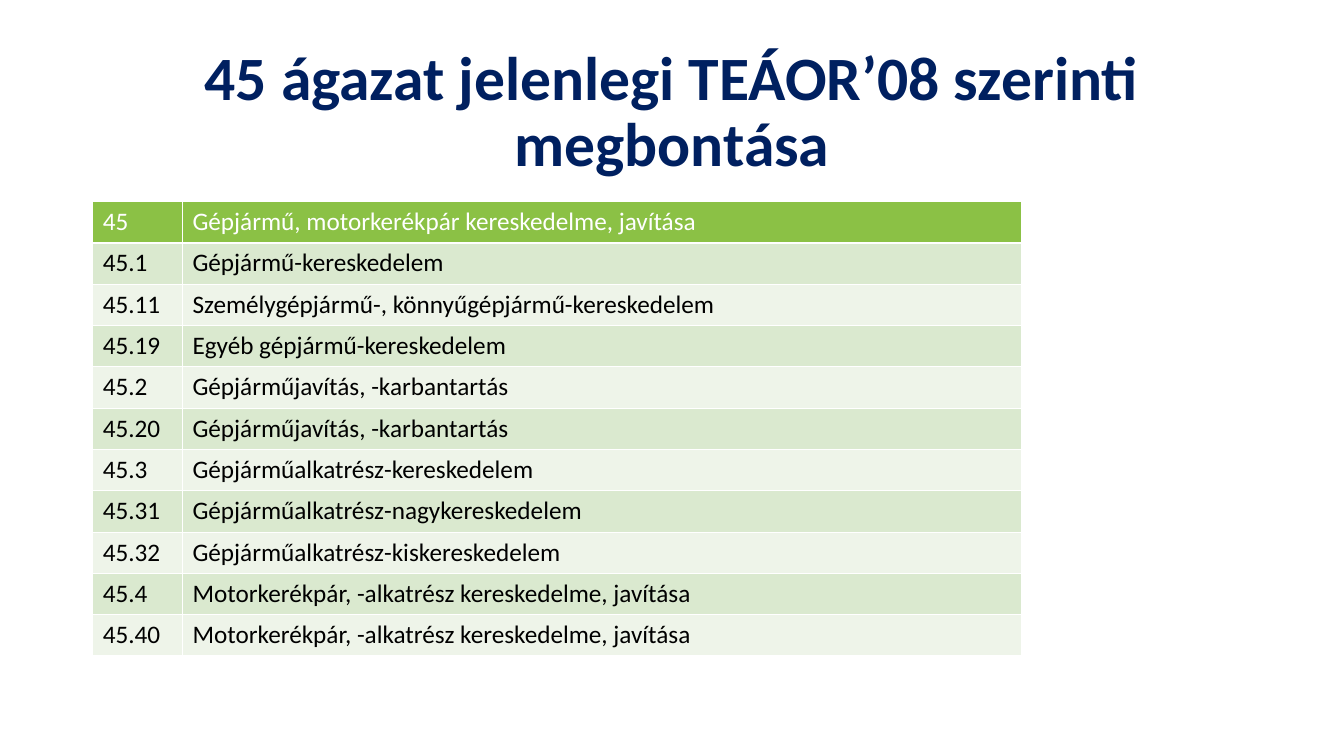
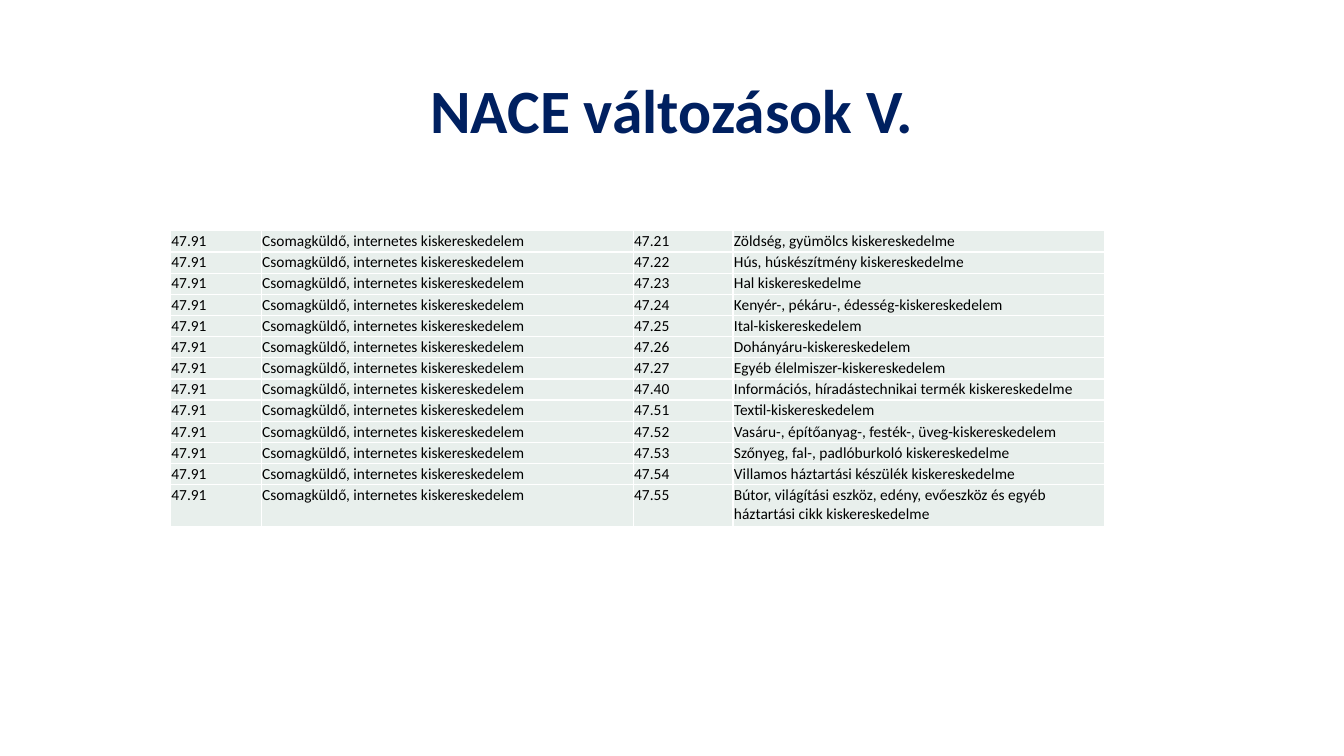
from pptx import Presentation
from pptx.dml.color import RGBColor
from pptx.enum.text import MSO_ANCHOR, PP_ALIGN
from pptx.oxml import parse_xml
from pptx.oxml.ns import nsdecls
from pptx.util import Inches, Pt

FONT = "Calibri"
NAVY, WHITE, BLACK = "002060", "FFFFFF", "000000"
GREEN, MID, PALE, MIST = "8BC145", "DAE9CF", "EEF4E9", "E8EFEC"
WIDE, HIGH = 13.33, 7.5

TRADE = [
    ("45", "Gépjármű, motorkerékpár kereskedelme, javítása"),
    ("45.1", "Gépjármű-kereskedelem"),
    ("45.11", "Személygépjármű-, könnyűgépjármű-kereskedelem"),
    ("45.19", "Egyéb gépjármű-kereskedelem"),
    ("45.2", "Gépjárműjavítás, -karbantartás"),
    ("45.20", "Gépjárműjavítás, -karbantartás"),
    ("45.3", "Gépjárműalkatrész-kereskedelem"),
    ("45.31", "Gépjárműalkatrész-nagykereskedelem"),
    ("45.32", "Gépjárműalkatrész-kiskereskedelem"),
    ("45.4", "Motorkerékpár, -alkatrész kereskedelme, javítása"),
    ("45.40", "Motorkerékpár, -alkatrész kereskedelme, javítása"),
]
OLD = ("47.91", "Csomagküldő, internetes kiskereskedelem")
NEW = [
    ("47.21", "Zöldség, gyümölcs kiskereskedelme"),
    ("47.22", "Hús, húskészítmény kiskereskedelme"),
    ("47.23", "Hal kiskereskedelme"),
    ("47.24", "Kenyér-, pékáru-, édesség-kiskereskedelem"),
    ("47.25", "Ital-kiskereskedelem"),
    ("47.26", "Dohányáru-kiskereskedelem"),
    ("47.27", "Egyéb élelmiszer-kiskereskedelem"),
    ("47.40", "Információs, híradástechnikai termék kiskereskedelme"),
    ("47.51", "Textil-kiskereskedelem"),
    ("47.52", "Vasáru-, építőanyag-, festék-, üveg-kiskereskedelem"),
    ("47.53", "Szőnyeg, fal-, padlóburkoló kiskereskedelme"),
    ("47.54", "Villamos háztartási készülék kiskereskedelme"),
    ("47.55", "Bútor, világítási eszköz, edény, evőeszköz és egyéb "
              "háztartási cikk kiskereskedelme"),
]
SLIDES = [
    dict(title="45 ágazat jelenlegi TEÁOR’08 szerinti megbontása",
         rows=TRADE, at=(0.92, 2), cols=(0.89, 8.32),
         tall=[0.41] * len(TRADE), size=18, pad=(0.1, 0.05, 0.1, 0.05),
         head=GREEN, bands=(PALE, MID)),
    dict(title="NACE változások V.",
         rows=[OLD + pair for pair in NEW], at=(1.69, 2.29),
         cols=(0.9, 3.69, 0.99, 3.69),
         tall=[0.21] * (len(NEW) - 1) + [0.42], size=11,
         pad=(0.01, 0.01, 0.01, 0), head=None, bands=(MIST, MIST)),
]


def color(code):
    return RGBColor.from_string(code)


def style(par, size, code, bold=False):
    font = par.font
    font.name, font.size, font.bold = FONT, Pt(size), bold
    font.color.rgb = color(code)


def add_title(slide, text):
    edge = 0.92
    box = slide.shapes.add_textbox(
        Inches(edge), Inches(0.4), Inches(WIDE - 2 * edge), Inches(1.45))
    frame = box.text_frame
    frame.word_wrap = True
    frame.vertical_anchor = MSO_ANCHOR.MIDDLE
    par = frame.paragraphs[0]
    par.text = text
    par.alignment = PP_ALIGN.CENTER
    par.line_spacing = 0.9
    style(par, 44, NAVY, True)


def add_edges(cell):
    props = cell._tc.get_or_add_tcPr()
    for side in "LRTB":
        props.append(parse_xml(
            f'<a:ln{side} {nsdecls("a")} w="{Pt(1)}"><a:solidFill>'
            f'<a:srgbClr val="{WHITE}"/></a:solidFill></a:ln{side}>'))


def add_grid(slide, rows, at, cols, tall, size, pad, head, bands):
    left, top = map(Inches, at)
    grid = slide.shapes.add_table(
        len(rows), len(cols), left, top,
        Inches(sum(cols)), Inches(sum(tall))).table
    grid.first_row = grid.horz_banding = False
    for col, width in zip(grid.columns, cols):
        col.width = Inches(width)
    for r, (row, height) in enumerate(zip(rows, tall)):
        grid.rows[r].height = Inches(height)
        top_row = head and r == 0
        for c, text in enumerate(row):
            cell = grid.cell(r, c)
            (cell.margin_left, cell.margin_top,
             cell.margin_right, cell.margin_bottom) = map(Inches, pad)
            add_edges(cell)
            cell.fill.solid()
            cell.fill.fore_color.rgb = color(head if top_row else bands[r % 2])
            par = cell.text_frame.paragraphs[0]
            par.text = text
            style(par, size, WHITE if top_row else BLACK)


def main():
    deck = Presentation()
    deck.slide_width, deck.slide_height = Inches(WIDE), Inches(HIGH)
    for part in SLIDES:
        slide = deck.slides.add_slide(deck.slide_layouts[6])
        add_title(slide, part["title"])
        add_grid(slide, **{k: v for k, v in part.items() if k != "title"})
    deck.save("out.pptx")


if __name__ == "__main__":
    main()
